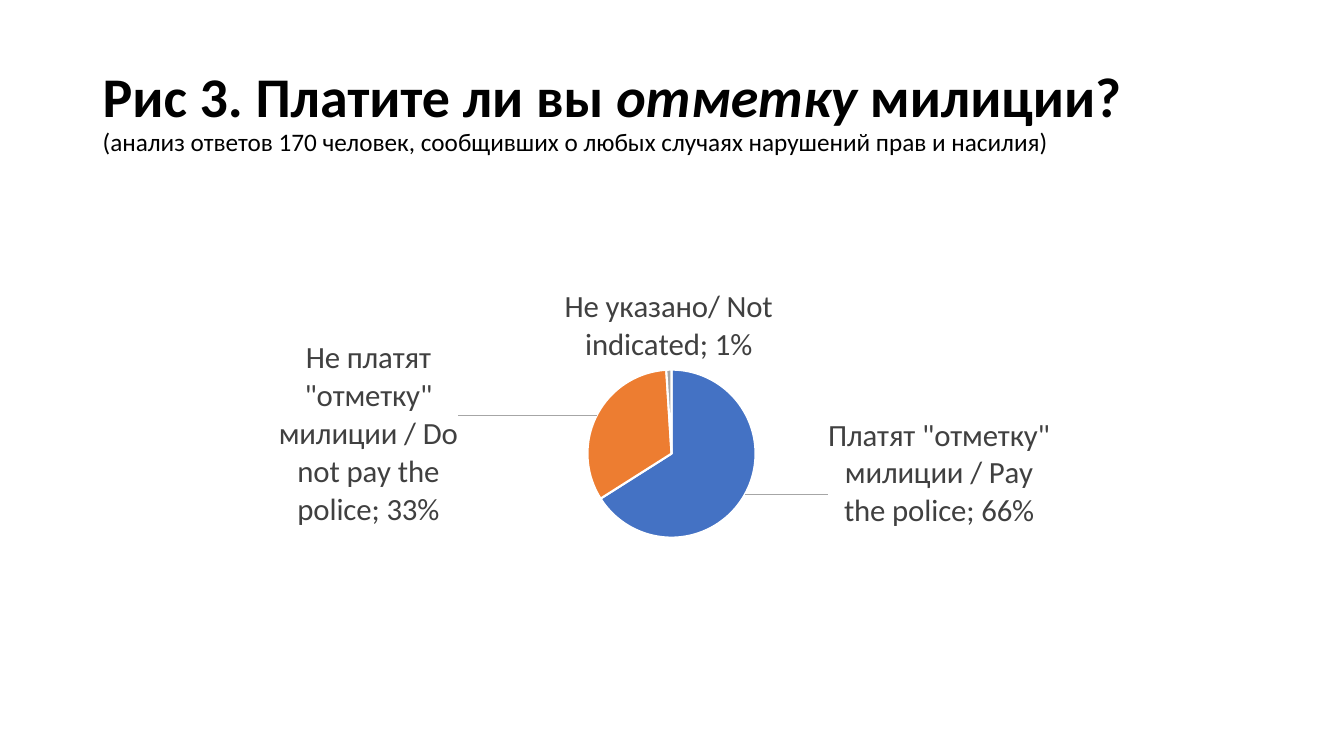
"""Builds a slide with a pie chart on whether respondents pay the police."""
from dataclasses import dataclass

from lxml import etree
from pptx import Presentation, util as u
from pptx.chart.data import CategoryChartData
from pptx.dml.color import RGBColor
from pptx.enum import chart as kinds, text
from pptx.oxml import parse_xml
from pptx.oxml.ns import nsdecls, qn

HEADING = [("Рис 3. Платите ли вы ", False), ("отметку", True), (" милиции? ", False)]
SUBTITLE = "(анализ ответов 170 человек, сообщивших о любых случаях нарушений прав и насилия)"
ANSWERS = [
    ('Платят "отметку" милиции / Pay the police', 0.66),
    ('Не платят "отметку" милиции / Do not pay the police', 0.33),
    ("Не указано/ Not indicated", 0.01),
]
LABEL_SHIFTS = [(0.07, -0.18), (-0.12, 0.26)]
TITLE_AREA = (0.92, 0.4, 11.5, 1.45)
CHART_AREA = (1.19, 2.11, 11.04, 4.42)
PIE_CENTRE, PIE_SIZE = (6.66, 4.5), 1.67


@dataclass(frozen=True)
class Theme:
    font: str = "Calibri"
    ink: str = "000000"
    label: str = "404040"
    leader: str = "A6A6A6"
    edge: str = "FFFFFF"
    slices: tuple = ("4472C4", "ED7D31", "A5A5A5")
    heading_size: int = 40
    subtitle_size: int = 18
    label_size: int = 22
    chart_size: int = 10


THEME = Theme()


def style(font, size, color, bold=False, italic=False):
    font.name, font.size = THEME.font, u.Pt(size)
    font.color.rgb = RGBColor.from_string(color)
    font.bold, font.italic = bold, italic


def manual_layout(**parts):
    layout = parse_xml(f"<c:layout {nsdecls('c')}><c:manualLayout/></c:layout>")
    for name, value in parts.items():
        etree.SubElement(layout[0], qn(f"c:{name}")).set("val", str(value))
    return layout


def set_label_content(labels):
    labels.find(qn("c:showVal")).set("val", "1")
    labels.find(qn("c:showCatName")).set("val", "1")
    labels.find(qn("c:showPercent")).set("val", "0")
    separator = parse_xml(f"<c:separator {nsdecls('c')}>; </c:separator>")
    last_flag = labels.find(qn("c:showBubbleSize"))
    if last_flag is None:
        last_flag = labels.find(qn("c:showPercent"))
    last_flag.addnext(separator)


def add_title(page):
    box = page.shapes.add_textbox(*map(u.Inches, TITLE_AREA))
    frame = box.text_frame
    frame.word_wrap = True
    frame.vertical_anchor = text.MSO_ANCHOR.MIDDLE
    para = frame.paragraphs[0]
    para.line_spacing = 0.9
    for words, italic in HEADING:
        span = para.add_run()
        span.text = words
        style(span.font, THEME.heading_size, THEME.ink, True, italic)
    para.add_line_break()
    span = para.add_run()
    span.text = SUBTITLE
    style(span.font, THEME.subtitle_size, THEME.ink)


def add_pie(page):
    data = CategoryChartData(number_format="0%")
    data.categories = [name for name, _ in ANSWERS]
    data.add_series("Series 1", [share for _, share in ANSWERS])
    chart = page.shapes.add_chart(
        kinds.XL_CHART_TYPE.PIE, *map(u.Inches, CHART_AREA), data).chart
    chart.has_legend = chart.has_title = False
    style(chart.font, THEME.chart_size, THEME.ink)

    left, top, width, height = CHART_AREA
    plot_area = chart.plots[0]._element.getparent()
    for old in plot_area.findall(qn("c:layout")):
        plot_area.remove(old)
    plot_area.insert(0, manual_layout(
        layoutTarget="inner", xMode="edge", yMode="edge",
        x=round((PIE_CENTRE[0] - PIE_SIZE / 2 - left) / width, 3),
        y=round((PIE_CENTRE[1] - PIE_SIZE / 2 - top) / height, 3),
        w=round(PIE_SIZE / width, 3), h=round(PIE_SIZE / height, 3)))

    chart.plots[0].vary_by_categories = True
    series = chart.plots[0].series[0]
    for index, color in enumerate(THEME.slices):
        piece = series.points[index].format
        piece.fill.solid()
        piece.fill.fore_color.rgb = RGBColor.from_string(color)
        piece.line.color.rgb = RGBColor.from_string(THEME.edge)
        piece.line.width = u.Pt(1.5)
    add_labels(series)


def add_labels(series):
    labels = series.data_labels
    labels.number_format, labels.number_format_is_linked = "0%", False
    labels.position = kinds.XL_LABEL_POSITION.OUTSIDE_END
    style(labels.font, THEME.label_size, THEME.label)
    group = labels._element
    set_label_content(group)
    for old in group.findall(qn("c:showLeaderLines")):
        group.remove(old)
    group.append(parse_xml(f'<c:showLeaderLines {nsdecls("c")} val="1"/>'))
    group.append(parse_xml(
        f'<c:leaderLines {nsdecls("c", "a")}><c:spPr><a:ln w="9525"><a:solidFill>'
        f'<a:srgbClr val="{THEME.leader}"/></a:solidFill></a:ln></c:spPr></c:leaderLines>'))

    for index, (across, down) in enumerate(LABEL_SHIFTS):
        label = series.points[index].data_label
        style(label.font, THEME.label_size, THEME.label)
        label.position = kinds.XL_LABEL_POSITION.OUTSIDE_END
        node = group.findall(qn("c:dLbl"))[index]
        node.find(qn("c:idx")).addnext(manual_layout(x=across, y=down))
        set_label_content(node)


def main():
    deck = Presentation()
    deck.slide_width, deck.slide_height = u.Inches(13.33), u.Inches(7.5)
    page = deck.slides.add_slide(deck.slide_layouts[6])
    add_title(page)
    add_pie(page)
    deck.save("out.pptx")


if __name__ == "__main__":
    main()
